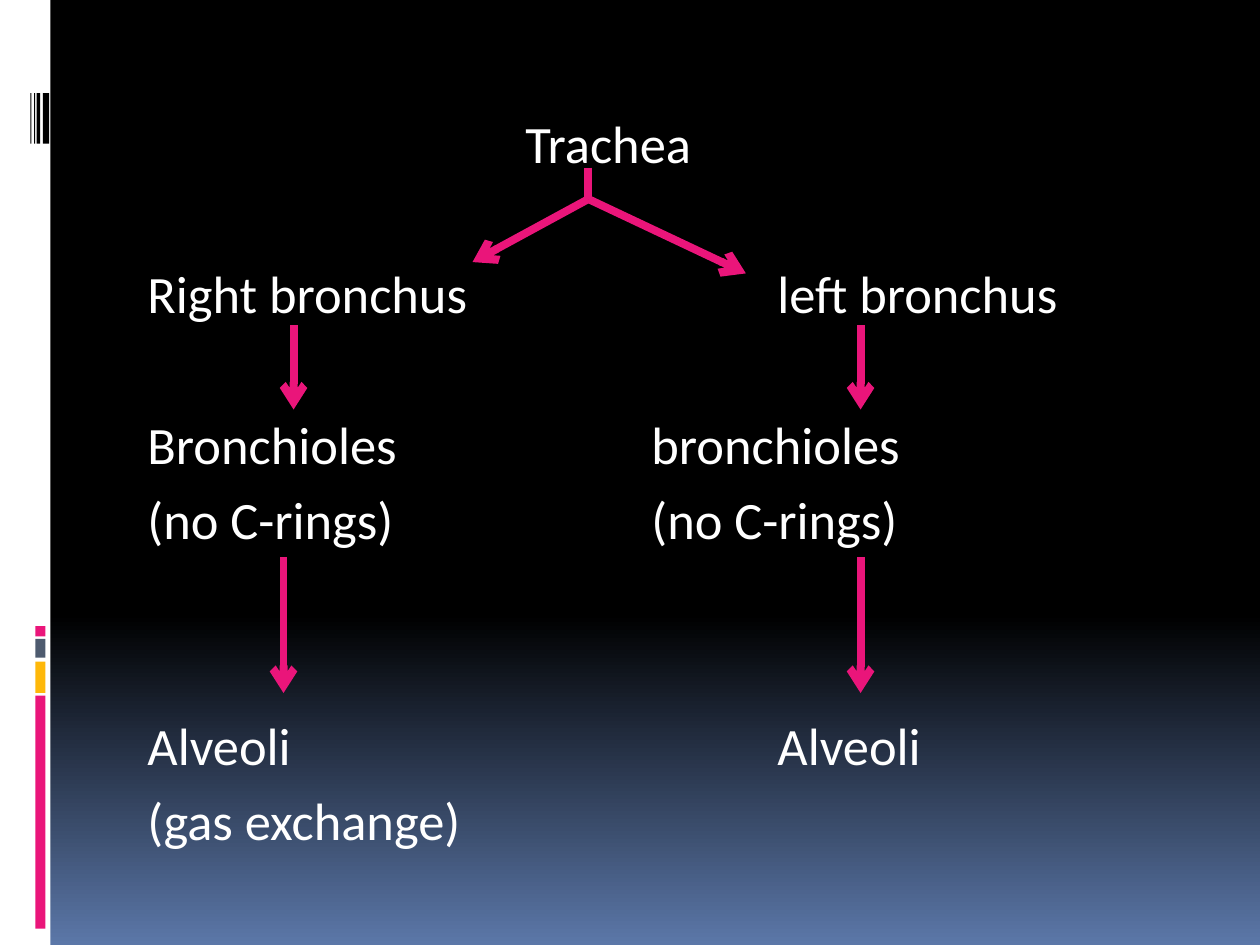
"""Build a slide that charts the airway from trachea to alveoli."""
import copy
from dataclasses import dataclass

import pptx
import pptx.dml.color
import pptx.enum.shapes
import pptx.enum.text
import pptx.oxml
import pptx.oxml.ns
import pptx.slide
import pptx.util
from pptx.util import Inches

COLORS = {
    "white": "FFFFFF",
    "black": "000000",
    "pink": "EA157A",
    "gold": "FEB80A",
    "slate": "4E5B6F",
    "blue": "5B77A8",
}
PITCH = 43.3
GAP = 6.7


@dataclass
class Bar:
    left: float
    top: float
    width: float
    height: float
    color: str


@dataclass
class Row:
    text: str
    tab: float = 1
    skip: int = 0


@dataclass
class Line:
    start: tuple[float, float]
    end: tuple[float, float]
    arrow: bool = True


BARS = [
    Bar(0, 0, 0.4, 7.5, "white"),
    Bar(0.28, 5.52, 0.08, 1.85, "pink"),
    Bar(0.28, 5.25, 0.08, 0.25, "gold"),
    Bar(0.28, 5.07, 0.08, 0.15, "slate"),
    Bar(0.28, 4.97, 0.08, 0.08, "pink"),
    *(Bar(left, 0.74, width, 0.4, "black")
      for left, width in [(0.34, 0.05), (0.29, 0.03), (0.27, 0.01), (0.24, 0.01)]),
]
ROWS = [
    Row("\tTrachea", 3),
    Row("Right bronchus\tleft bronchus", 5, 1),
    Row("Bronchioles\tbronchioles", 4, 1),
    Row("(no C-rings)\t(no C-rings)", 4),
    Row("Alveoli\tAlveoli", 5, 2),
    Row("(gas exchange)"),
]
FORK = (4.67, 1.58)
LINES = [
    Line((4.67, 1.33), FORK, False),
    Line(FORK, (3.75, 2.08)),
    Line(FORK, (5.92, 2.17)),
    *(Line((x, top), (x, end))
      for top, end, pair in [(2.58, 3.25, (2.33, 6.83)), (4.42, 5.5, (2.25, 6.83))]
      for x in pair),
]


def get_color(name: str) -> pptx.dml.color.RGBColor:
    """Return the named color."""
    return pptx.dml.color.RGBColor.from_string(COLORS[name])


def add_node(parent, tag: str, **attrs: str) -> None:
    """Append a drawing node to its parent."""
    node = pptx.oxml.parse_xml(f"<{tag} {pptx.oxml.ns.nsdecls('a')}/>")
    for key, value in attrs.items():
        node.set(key, value)
    parent.append(node)


def paint_back(slide: pptx.slide.Slide) -> None:
    """Fade the slide from black to blue."""
    fill = slide.background.fill
    fill.gradient()
    fill.gradient_angle = 270
    for stop, name, place in zip(fill.gradient_stops, ("black", "blue"), (0.65, 1)):
        stop.color.rgb = get_color(name)
        stop.position = place
    stops = next(slide.element.iter(pptx.oxml.ns.qn("a:gsLst")))
    first = copy.deepcopy(stops[0])
    first.set("pos", "0")
    stops.insert(0, first)


def draw_bar(slide: pptx.slide.Slide, bar: Bar) -> None:
    """Draw one plain bar."""
    box = (Inches(n) for n in (bar.left, bar.top, bar.width, bar.height))
    shape = slide.shapes.add_shape(pptx.enum.shapes.MSO_SHAPE.RECTANGLE, *box)
    shape.shadow.inherit = False
    shape.fill.solid()
    shape.fill.fore_color.rgb = get_color(bar.color)
    shape.line.fill.background()


def write_rows(slide: pptx.slide.Slide, rows: list[Row]) -> None:
    """Write the rows of the chart in the body."""
    body = slide.placeholders[1]
    body.left, body.top = Inches(1), Inches(0.83)
    body.width, body.height = Inches(8.5), Inches(6.5)
    frame = body.text_frame
    frame.word_wrap = True
    frame.auto_size = pptx.enum.text.MSO_AUTO_SIZE.NONE
    frame.vertical_anchor = pptx.enum.text.MSO_ANCHOR.TOP
    frame.margin_left = Inches(0.17)
    for index, row in enumerate(rows):
        para = frame.add_paragraph() if index else frame.paragraphs[0]
        para.text = row.text
        para.space_before = pptx.util.Pt(GAP + PITCH * row.skip if index else 0)
        props = para._p.get_or_add_pPr()
        props.set("marL", "0")
        props.set("indent", "0")
        props.set("defTabSz", str(Inches(row.tab)))
        add_node(props, "a:buNone")
        para.font.name = "Calibri"
        para.font.size = pptx.util.Pt(30)
        para.font.color.rgb = get_color("white")


def draw_line(slide: pptx.slide.Slide, line: Line) -> None:
    """Draw one line, with an arrow if asked."""
    ends = (Inches(n) for n in (*line.start, *line.end))
    link = slide.shapes.add_connector(pptx.enum.shapes.MSO_CONNECTOR.STRAIGHT, *ends)
    link.line.color.rgb = get_color("pink")
    link.line.width = pptx.util.Pt(4.5)
    props = link.element.spPr
    if line.arrow:
        add_node(props.find(pptx.oxml.ns.qn("a:ln")), "a:tailEnd", type="arrow")
    add_node(props, "a:effectLst")


def main() -> None:
    """Build and save the deck."""
    deck = pptx.Presentation()
    deck.slide_width, deck.slide_height = Inches(10), Inches(7.5)
    slide = deck.slides.add_slide(deck.slide_layouts[1])
    title = slide.shapes.title.element
    title.getparent().remove(title)
    paint_back(slide)
    for bar in BARS:
        draw_bar(slide, bar)
    write_rows(slide, ROWS)
    for line in LINES:
        draw_line(slide, line)
    deck.save("out.pptx")


if __name__ == "__main__":
    main()
